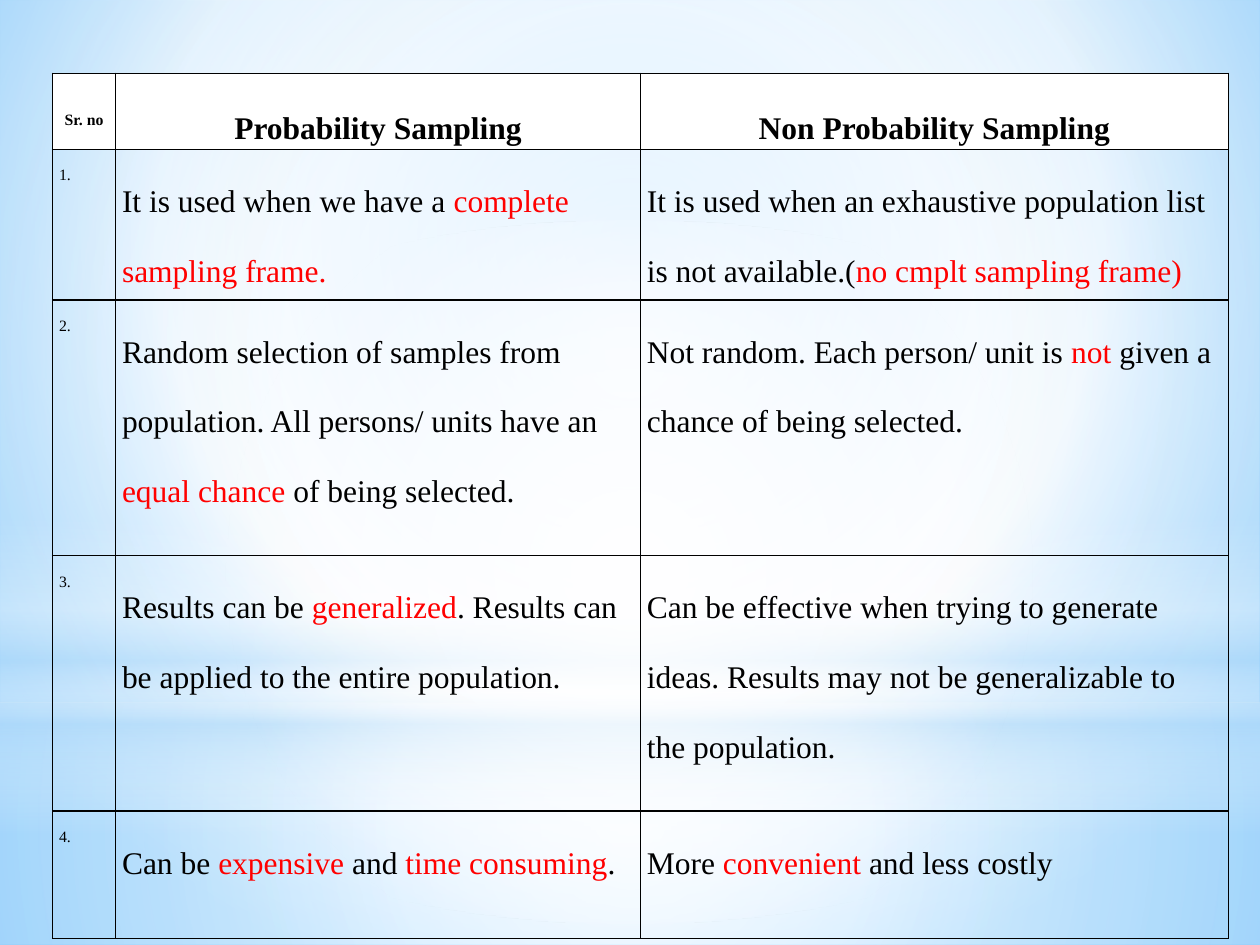
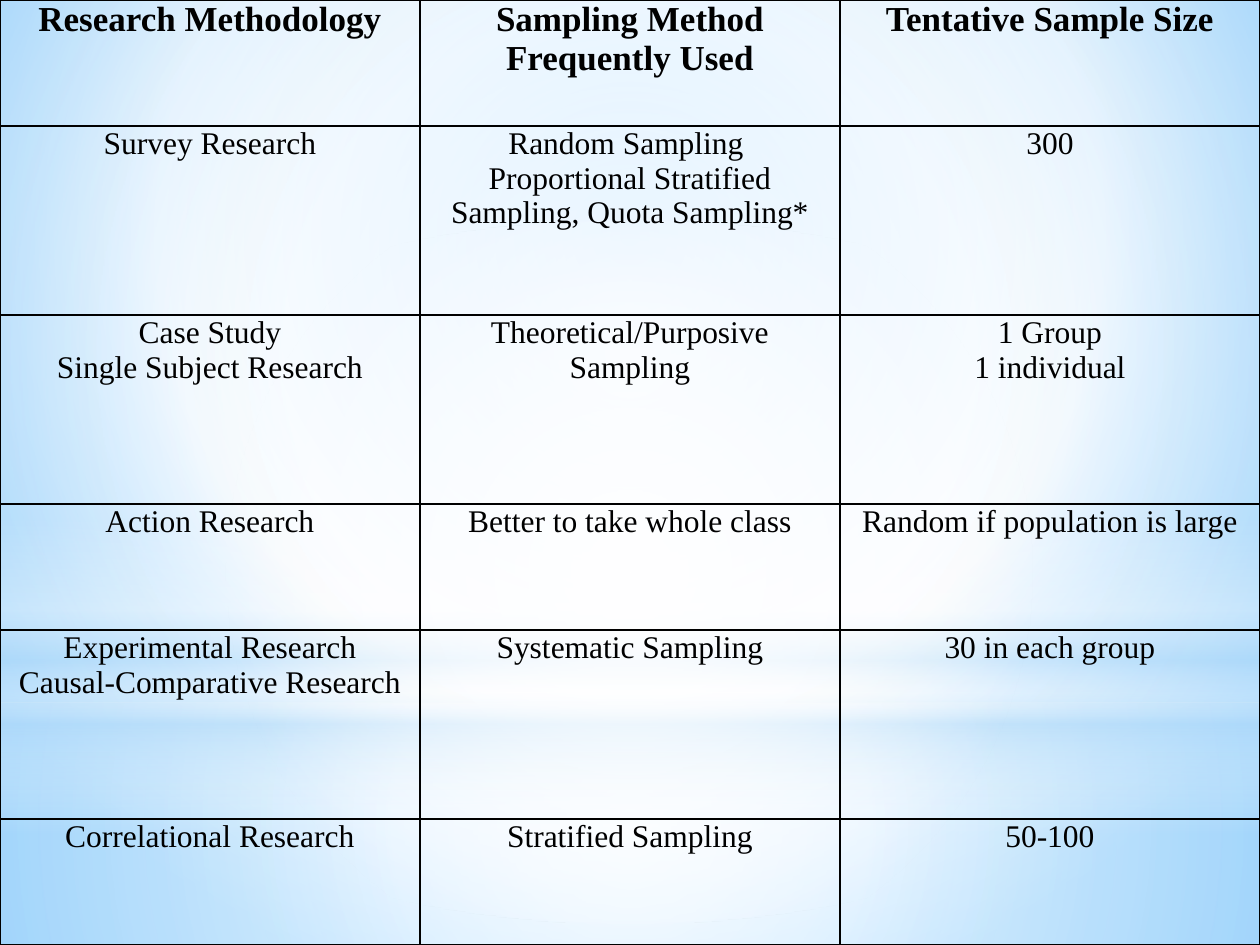
from dataclasses import dataclass

import pptx
import pptx.dml.color
import pptx.enum.shapes
import pptx.enum.text
import pptx.oxml
import pptx.oxml.ns
import pptx.util

Cm, Pt = pptx.util.Cm, pptx.util.Pt
RGB = pptx.dml.color.RGBColor.from_string
qn = pptx.oxml.ns.qn
MSO_SHAPE = pptx.enum.shapes.MSO_SHAPE
ALIGN = pptx.enum.text.PP_ALIGN
ANCHOR = pptx.enum.text.MSO_ANCHOR


@dataclass(frozen=True)
class Theme:
    width: float = 25.4
    height: float = 19.05
    font: str = "Times New Roman"
    ink: str = "000000"
    accent: str = "FF0000"
    white: str = "FFFFFF"
    haze: str = "B4DCFA"
    sky: str = "9ED5FF"
    deep_sky: str = "5BB9FF"
    title: int = 20
    body: int = 18
    small: int = 9
    border: int = 1


T = Theme()
CENTRE = (50, 50, 50, 50)

# Stops are (position %, colour, opacity %).
BACKGROUND = [(0, T.sky, 100), (60, T.white, 100), (100, T.deep_sky, 100)]
# Each glow: preset, box (left, top, width, height), stops, focus (None = vertical).
GLOWS = [
    (MSO_SHAPE.RECTANGLE, (0, 14.17, T.width, 4.88),
     [(0, T.white, 91), (37, T.white, 76), (100, T.haze, 79)], CENTRE),
    (MSO_SHAPE.RECTANGLE, (0, 0, T.width, 14.17),
     [(0, T.white, 89), (48, T.white, 62), (100, T.haze, 79)], CENTRE),
    (MSO_SHAPE.RECTANGLE, (0, 10.46, T.width, 6.35),
     [(0, T.white, 0), (29, T.white, 30), (45, T.haze, 40),
      (55, T.white, 26), (65, T.haze, 60), (100, T.white, 0)], None),
    (MSO_SHAPE.OVAL, (0, 4.45, T.width, 14.17),
     [(0, T.white, 100), (56, T.white, 0)], CENTRE),
]

COMPARISON = [
    ("Sr. no", "Probability Sampling", "Non Probability Sampling"),
    ("1.", "It is used when we have a |complete sampling frame.|",
     "It is used when an exhaustive population list is not available.("
     "|no cmplt sampling frame)|"),
    ("2.", "Random selection of samples from population. All persons/ units "
     "have an |equal chance |of being selected.",
     "Not random. Each person/ unit is| not |given a chance of being selected."),
    ("3.", "Results can be| generalized|. Results can be applied to the "
     "entire population.",
     "Can be effective when trying to generate ideas. Results may not be "
     "generalizable to the population."),
    ("4.", "Can be |expensive |and |time consuming|.",
     "More |convenient| and less costly"),
]

METHODS = [
    ("Research Methodology", "Sampling Method Frequently Used",
     "Tentative Sample Size"),
    ("Survey Research",
     "Random Sampling \nProportional Stratified Sampling, Quota Sampling*", "300"),
    ("Case Study\nSingle Subject Research", "Theoretical/Purposive Sampling",
     "1 Group\n1 individual"),
    ("Action Research", "Better to take whole class",
     "Random if population is large"),
    ("Experimental Research\nCausal-Comparative Research",
     "Systematic Sampling", "30 in each group"),
    ("Correlational Research", "Stratified Sampling", "50-100"),
]


def apply_gradient(props, stops, focus):
    """Replace the solid fill in props by a circular or vertical gradient."""
    stop_xml = "".join(
        f'<a:gs pos="{pos * 1000}"><a:srgbClr val="{color}">'
        f'<a:alpha val="{alpha * 1000}"/></a:srgbClr></a:gs>'
        for pos, color, alpha in stops)
    if focus:
        left, top, right, bottom = (side * 1000 for side in focus)
        shade = (f'<a:path path="circle"><a:fillToRect l="{left}" t="{top}" '
                 f'r="{right}" b="{bottom}"/></a:path>')
    else:
        shade = '<a:lin ang="5400000" scaled="0"/>'
    grad = pptx.oxml.parse_xml(
        f'<a:gradFill {pptx.oxml.ns.nsdecls("a")} rotWithShape="1">'
        f'<a:gsLst>{stop_xml}</a:gsLst>{shade}</a:gradFill>')
    props.replace(props.find(qn("a:solidFill")), grad)


def draw_backdrop(s):
    s.background.fill.solid()
    apply_gradient(s.element.find(".//" + qn("p:bgPr")), BACKGROUND, (20, 10, 20, 60))
    for preset, box, stops, focus in GLOWS:
        sp = s.shapes.add_shape(preset, *map(Cm, box))
        sp.shadow.inherit = False
        sp.line.fill.background()
        sp.fill.solid()
        apply_gradient(sp.element.spPr, stops, focus)


def write_text(tf, text, size=T.body, bold=False, align=ALIGN.LEFT,
               spacing=None, after=None):
    """Newlines part paragraphs; text between bars takes the accent colour."""
    for i, line in enumerate(text.split("\n")):
        p = tf.add_paragraph() if i else tf.paragraphs[0]
        p.alignment = align
        p.line_spacing = spacing
        p.space_after = after
        for j, part in enumerate(line.split("|")):
            if part:
                r = p.add_run()
                r.text = part
                r.font.name, r.font.size, r.font.bold = T.font, Pt(size), bold
                r.font.color.rgb = RGB(T.accent if j % 2 else T.ink)


def set_borders(cell):
    for side in "LRTB":
        cell._tc.get_or_add_tcPr().append(pptx.oxml.parse_xml(
            f'<a:ln{side} {pptx.oxml.ns.nsdecls("a")} w="{Pt(T.border)}">'
            f'<a:solidFill><a:srgbClr val="{T.ink}"/></a:solidFill></a:ln{side}>'))


def add_grid(s, left, top, widths, heights, margin):
    """Add a bordered, unfilled table whose rows and columns have these sizes."""
    table = s.shapes.add_table(
        len(heights), len(widths), Cm(left), Cm(top),
        Cm(sum(widths)), Cm(sum(heights))).table
    table.first_row = table.horz_banding = False
    for column, width in zip(table.columns, widths):
        column.width = Cm(width)
    for row, height in zip(table.rows, heights):
        row.height = Cm(height)
    for cell in table.iter_cells():
        cell.margin_left = cell.margin_right = Cm(margin)
        cell.margin_top = cell.margin_bottom = 0
        set_borders(cell)
        cell.fill.background()
    return table


def add_comparison(s, left, top):
    table = add_grid(s, left, top, (1.27, 10.58, 11.85),
                     (1.53, 3.04, 5.15, 5.15, 2.57), margin=0.13)
    for i, row in enumerate(COMPARISON):
        for j, text in enumerate(row):
            cell = table.cell(i, j)
            header = i == 0
            if header:
                cell.fill.solid()
                cell.fill.fore_color.rgb = RGB(T.white)
                cell.vertical_anchor = ANCHOR.MIDDLE
            write_text(cell.text_frame, text, bold=header,
                       size=T.body if j else T.small,
                       align=ALIGN.CENTER if header else ALIGN.LEFT,
                       spacing=2.0, after=Pt(10))


def add_methods(s, left, top, width, height):
    unit = height / 15
    table = add_grid(s, left, top, [width / 3] * 3,
                     [unit * n for n in (2, 3, 3, 2, 3, 2)], margin=0.18)
    for i, row in enumerate(METHODS):
        for j, text in enumerate(row):
            write_text(table.cell(i, j).text_frame, text, bold=i == 0,
                       size=T.body if i else T.title, align=ALIGN.CENTER)


def add_slide(prs):
    s = prs.slides.add_slide(prs.slide_layouts[6])
    draw_backdrop(s)
    return s


def main():
    prs = pptx.Presentation()
    prs.slide_width, prs.slide_height = Cm(T.width), Cm(T.height)
    add_comparison(add_slide(prs), 1.06, 1.48)
    add_methods(add_slide(prs), 0, 0, T.width, T.height)
    prs.save("out.pptx")


if __name__ == "__main__":
    main()
